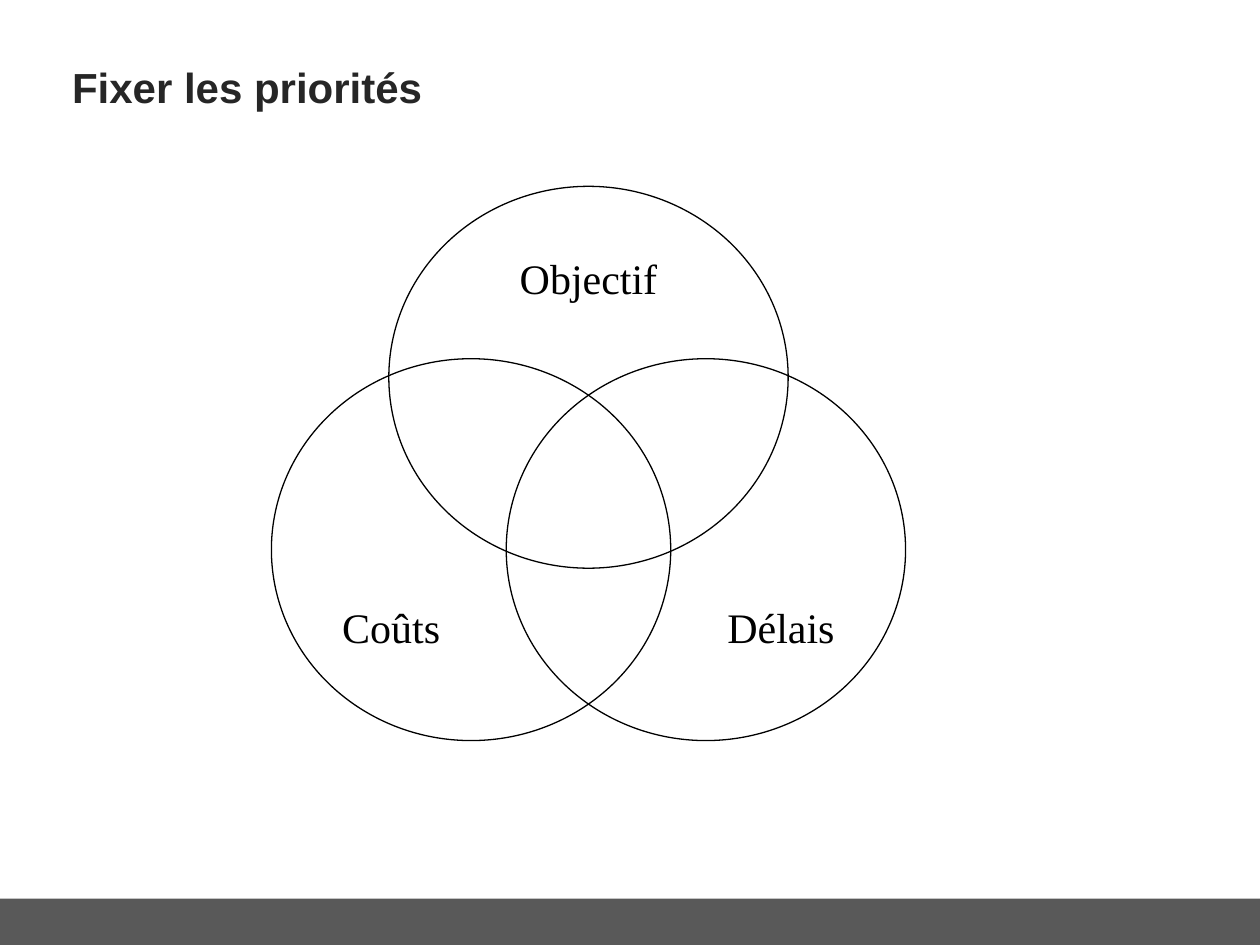
from dataclasses import dataclass

from pptx import Presentation
from pptx.dml.color import RGBColor
from pptx.enum.shapes import MSO_SHAPE
from pptx.enum.text import MSO_ANCHOR, PP_ALIGN
from pptx.util import Pt

OVAL, RECTANGLE = MSO_SHAPE.OVAL, MSO_SHAPE.RECTANGLE
TOP, MIDDLE = MSO_ANCHOR.TOP, MSO_ANCHOR.MIDDLE
LEFT, CENTER, RIGHT = PP_ALIGN.LEFT, PP_ALIGN.CENTER, PP_ALIGN.RIGHT
BLACK = RGBColor(0x00, 0x00, 0x00)
CHARCOAL = RGBColor(0x26, 0x26, 0x26)
GREY = RGBColor(0x59, 0x59, 0x59)

SLIDE_WIDTH, SLIDE_HEIGHT = 720, 540
BAND_HEIGHT = 26.5
CIRCLE_WIDTH, CIRCLE_HEIGHT = 228.2, 218.2
CENTRE_X, UPPER_TOP, LOWER_TOP = 336.3, 106.5, 205
LOWER_OFFSET = 67.1


@dataclass(frozen=True)
class Priority:
    label: str
    centre_x: float
    top: float
    align: PP_ALIGN
    label_drop: float


PRIORITIES = [
    Priority("Objectif", CENTRE_X, UPPER_TOP, CENTER, 6),
    Priority("Coûts", CENTRE_X - LOWER_OFFSET, LOWER_TOP, LEFT, 107),
    Priority("Délais", CENTRE_X + LOWER_OFFSET, LOWER_TOP, RIGHT, 107),
]


def write(shape, text: str, *, font: str, color: RGBColor, align: PP_ALIGN,
          anchor: MSO_ANCHOR, bold: bool = False, margin_top: float = 3.6) -> None:
    frame = shape.text_frame
    frame.word_wrap = True
    frame.vertical_anchor = anchor
    frame.margin_left = frame.margin_right = Pt(7.2)
    frame.margin_top, frame.margin_bottom = Pt(margin_top), Pt(3.6)
    paragraph = frame.paragraphs[0]
    paragraph.text = text
    paragraph.alignment = align
    paragraph.font.name = font
    paragraph.font.size = Pt(24)
    paragraph.font.bold = bold
    paragraph.font.color.rgb = color


def draw_band(slide) -> None:
    band = slide.shapes.add_shape(RECTANGLE, Pt(0), Pt(SLIDE_HEIGHT - BAND_HEIGHT),
                                  Pt(SLIDE_WIDTH), Pt(BAND_HEIGHT))
    band.shadow.inherit = False
    band.fill.solid()
    band.fill.fore_color.rgb = GREY
    band.line.fill.background()


def draw_priority(slide, priority: Priority) -> None:
    circle = slide.shapes.add_shape(
        OVAL, Pt(priority.centre_x - CIRCLE_WIDTH / 2), Pt(priority.top),
        Pt(CIRCLE_WIDTH), Pt(CIRCLE_HEIGHT))
    circle.shadow.inherit = False
    circle.fill.background()
    circle.line.color.rgb = BLACK
    circle.line.width = Pt(0.75)
    write(circle, priority.label, font="Times New Roman", color=BLACK,
          align=priority.align, anchor=TOP, margin_top=priority.label_drop)


def main() -> None:
    deck = Presentation()
    deck.slide_width, deck.slide_height = Pt(SLIDE_WIDTH), Pt(SLIDE_HEIGHT)
    slide = deck.slides.add_slide(deck.slide_layouts[5])
    draw_band(slide)
    title = slide.shapes.title
    title.left, title.top, title.width, title.height = Pt(34), Pt(29.5), Pt(610), Pt(40.5)
    write(title, "Fixer les priorités", font="Arial", color=CHARCOAL,
          align=LEFT, anchor=MIDDLE, bold=True)
    for priority in PRIORITIES:
        draw_priority(slide, priority)
    deck.save("out.pptx")


if __name__ == "__main__":
    main()
